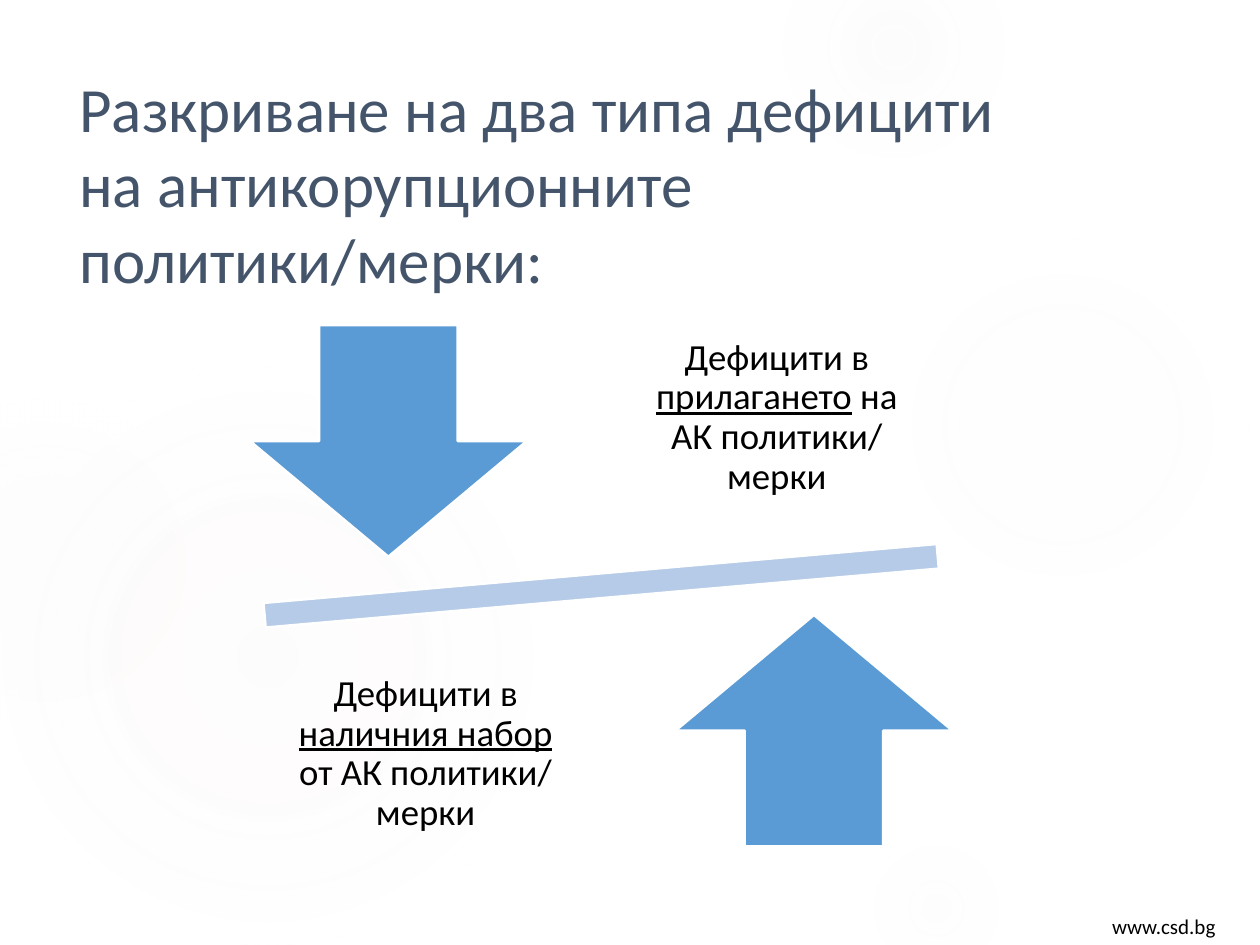
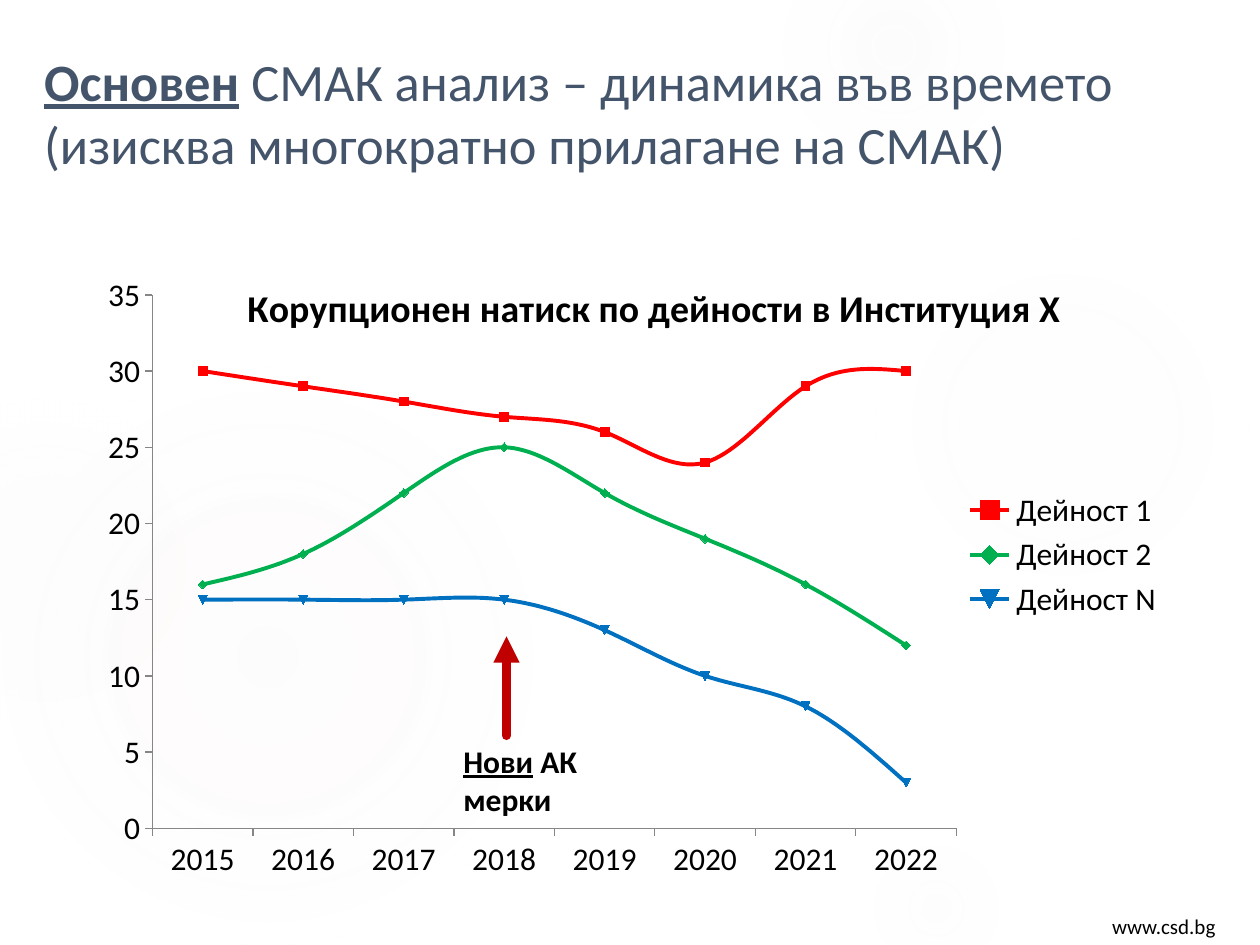
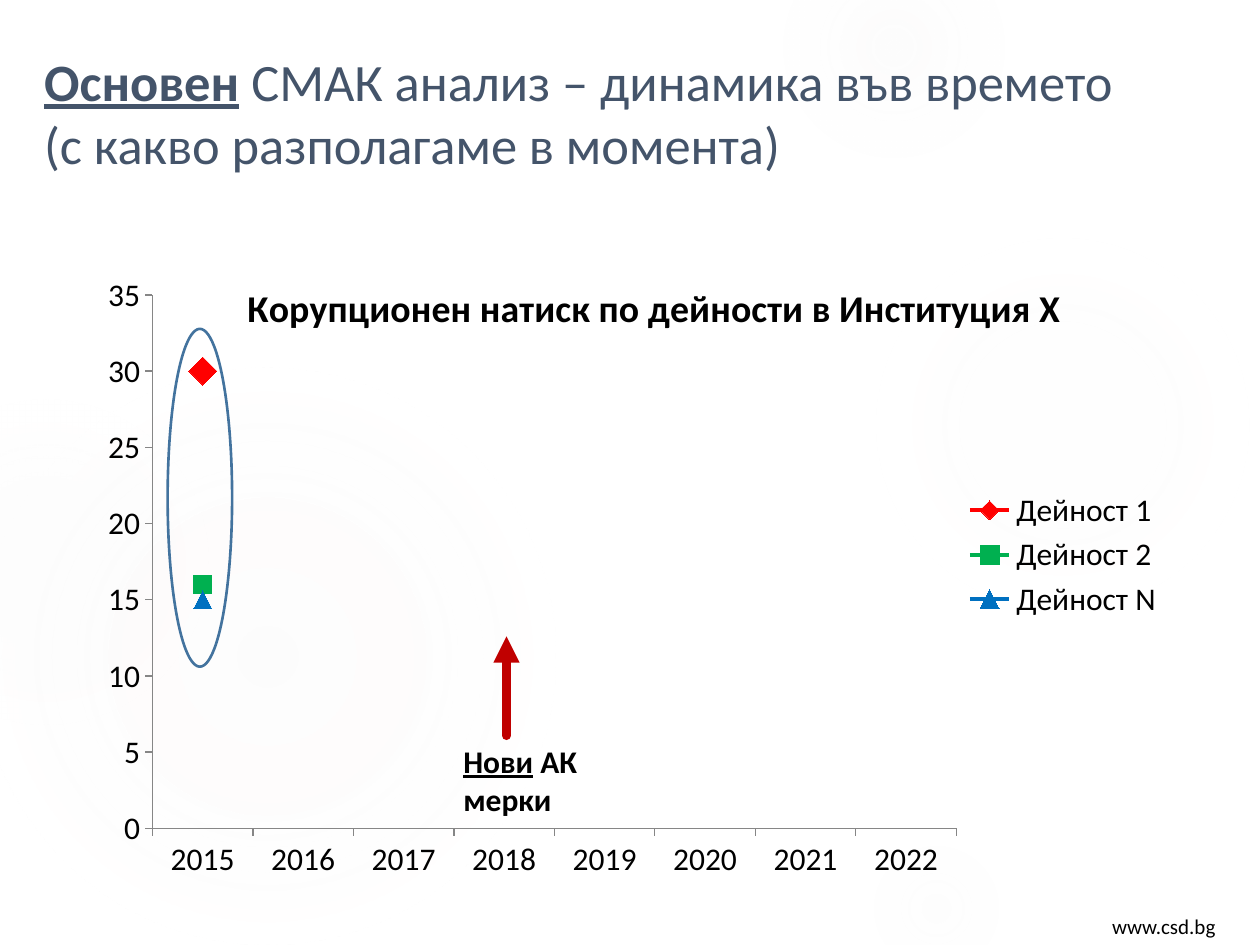
"""Builds three slides on deficits in anti-corruption measures."""
from lxml.etree import SubElement
from pptx import Presentation
from pptx.chart.data import CategoryChartData
from pptx.dml.color import RGBColor
from pptx.enum.chart import (XL_CHART_TYPE, XL_LEGEND_POSITION,
                             XL_MARKER_STYLE, XL_TICK_MARK)
from pptx.enum.shapes import MSO_CONNECTOR, MSO_SHAPE
from pptx.enum.text import MSO_ANCHOR, PP_ALIGN
from pptx.oxml import parse_xml
from pptx.oxml.ns import nsdecls, qn
from pptx.util import Cm, Pt

HUES = {"ink": "000000", "title": "44546A", "halo": "F1F0F0", "white": "FFFFFF",
        "arrow": "5B9BD5", "bar": "B5CBE7", "red": "FF0000", "green": "00B050",
        "blue": "0070C0", "axis": "868686", "mark": "C00000", "ring": "43739E"}
FACE = "Calibri"

HALOS = [
    (17.5, 4.65, 7.82, [(0, 7), (36, 6), (69, 0)]),
    (15.8, -1.27, 4.45, [(0, 14), (36, 7), (73, 0)]),
    (17.5, 16.94, 2.74, [(0, 9), (36, 5), (66, 0)]),
    (-0.43, 7.42, 11.63, [(0, 11), (36, 10), (75, 0)]),
    (-2.34, 8.05, 6.55, [(0, 8), (36, 8), (72, 0)]),
]
FOOT = "www.csd.bg"

LEAD = "Разкриване на два типа дефицити на антикорупционните политики/мерки:"
SIDES = [
    (1, MSO_SHAPE.DOWN_ARROW,
     [("Дефицити в ", ""), ("прилагането", "u"), (" на АК политики/ мерки", "")]),
    (-1, MSO_SHAPE.UP_ARROW,
     [("Дефицити в ", ""), ("наличния набор ", "u"), ("от АК политики/ мерки", "")]),
]
MID = (12.12, 11.81)

YEARS = [str(year) for year in range(2015, 2023)]
HEAD = "Корупционен натиск по дейности в Институция Х"
NEW = [("Нови", "bu"), (" АК мерки", "b")]
ACTS = [
    ("Дейност 1", "red", [30, 29, 28, 27, 26, 24, 29, 30]),
    ("Дейност 2", "green", [16, 18, 22, 25, 22, 19, 16, 12]),
    ("Дейност N", "blue", [15, 15, 15, 15, 13, 10, 8, 3]),
]
AUTO = XL_MARKER_STYLE.AUTOMATIC
TRENDS = [
    ("изисква многократно прилагане на СМАК", 8, [(AUTO, 5)] * 3),
    ("с какво разполагаме в момента", 1,
     [(XL_MARKER_STYLE.DIAMOND, 16), (XL_MARKER_STYLE.SQUARE, 10),
      (XL_MARKER_STYLE.TRIANGLE, 10)]),
]
PLOT = {"layoutTarget": "inner", "xMode": "edge", "yMode": "edge",
        "x": 0.07, "y": 0.12, "w": 0.73, "h": 0.78}
SPOT = {"xMode": "edge", "yMode": "edge", "x": 0.15, "y": 0.09}


def rgb(hue):
    return RGBColor.from_string(HUES[hue])


def apply(item, form):
    for key, value in form.items():
        setattr(item, key, value)


def ink(font, size, hue="ink", **form):
    apply(font, {"name": FACE, "size": Pt(size), **form})
    font.color.rgb = rgb(hue)


def paint(part, hue):
    part.fill.solid()
    part.fill.fore_color.rgb = rgb(hue)


def edge(line, hue, width):
    line.color.rgb = rgb(hue)
    line.width = Pt(width)


def draw(slide, kind, box):
    shape = slide.shapes.add_shape(kind, *map(Cm, box))
    shape.shadow.inherit = False
    return shape


def write(slide, box, runs, size, hue="ink", frame=None, para=None):
    text = slide.shapes.add_textbox(*map(Cm, box)).text_frame
    apply(text, {"word_wrap": True, **(frame or {})})
    line = text.paragraphs[0]
    apply(line, para or {})
    for words, marks in runs:
        run = line.add_run()
        run.text = words
        ink(run.font, size, hue, bold="b" in marks, underline="u" in marks)


def halo(slide, left, top, size, stops):
    shape = draw(slide, MSO_SHAPE.OVAL, (left, top, size, size))
    shape.line.fill.background()
    shape.fill.background()
    marks = "".join(
        f'<a:gs pos="{pos * 1000}"><a:srgbClr val="{HUES["halo"]}">'
        f'<a:alpha val="{alpha * 1000}"/></a:srgbClr></a:gs>'
        for pos, alpha in stops)
    grad = parse_xml(
        f'<a:gradFill {nsdecls("a")}><a:gsLst>{marks}</a:gsLst><a:path path="circle">'
        '<a:fillToRect l="50000" t="50000" r="50000" b="50000"/></a:path></a:gradFill>')
    props = shape._element.spPr
    props.replace(props.find(qn("a:noFill")), grad)


def start(deck):
    slide = deck.slides.add_slide(deck.slide_layouts[6])
    for item in HALOS:
        halo(slide, *item)
    write(slide, (22.17, 18.29, 3.23, 0.76), [(FOOT, "")], 12)
    return slide


def around(shift, size, sign):
    return [mid + sign * gap - span / 2
            for mid, gap, span in zip(MID, shift, size)] + list(size)


def block(slide, kind, box, hue):
    shape = draw(slide, kind, box)
    paint(shape, hue)
    edge(shape.line, "white", 1.5)
    return shape


def scale(deck):
    slide = start(deck)
    write(slide, (1.35, 1.27, 19.61, 4.72), [(LEAD, "")], 36, "title")
    bar = block(slide, MSO_SHAPE.MATH_MINUS, around((0, 0), (18.54, 2.13), 1), "bar")
    bar.rotation = 355
    frame = {f"margin_{side}": Cm(0.41) for side in ("left", "top", "right", "bottom")}
    frame["vertical_anchor"] = MSO_ANCHOR.MIDDLE
    para = {"alignment": PP_ALIGN.CENTER, "line_spacing": 0.9}
    for sign, kind, runs in SIDES:
        block(slide, kind, around((-4.29, -2.92), (5.59, 4.67), sign), "arrow")
        write(slide, around((3.54, -3.39), (5.97, 4.9), sign), runs, 21,
              frame=frame, para=para)


def place(part, rules):
    old = part.find(qn("c:layout"))
    if old is not None:
        part.remove(old)
    items = "".join(f'<c:{key} val="{value}"/>' for key, value in rules.items())
    node = parse_xml(f'<c:layout {nsdecls("c")}><c:manualLayout>{items}'
                     '</c:manualLayout></c:layout>')
    text = part.find(qn("c:tx"))
    if text is None:
        part.insert(0, node)
    else:
        text.addnext(node)


def graph(slide, count, signs):
    data = CategoryChartData()
    data.categories = YEARS
    for name, _, values in ACTS:
        data.add_series(name, values[:count] + [None] * (len(YEARS) - count))
    box = map(Cm, (1.52, 4.29, 22.2, 13.79))
    chart = slide.shapes.add_chart(XL_CHART_TYPE.LINE_MARKERS, *box, data).chart
    ink(chart.font, 18)
    apply(chart, {"has_title": True, "has_legend": True})
    apply(chart.legend, {"position": XL_LEGEND_POSITION.RIGHT,
                         "include_in_layout": False})
    title = chart.chart_title
    title.text_frame.text = HEAD
    ink(title.text_frame.paragraphs[0].runs[0].font, 21.6, bold=True)
    title.include_in_layout = False
    place(title._element, SPOT)
    place(chart._chartSpace.chart.plotArea, PLOT)
    for axis in (chart.category_axis, chart.value_axis):
        apply(axis, {"has_major_gridlines": False,
                     "major_tick_mark": XL_TICK_MARK.OUTSIDE,
                     "minor_tick_mark": XL_TICK_MARK.NONE})
        edge(axis.format.line, "axis", 0.75)
    apply(chart.value_axis, {"minimum_scale": 0, "maximum_scale": 35, "major_unit": 5})
    plot = chart.plots[0]
    plot.vary_by_categories = False
    for line, (_, hue, _), (style, size) in zip(plot.series, ACTS, signs):
        line.smooth = True
        edge(line.format.line, hue, 2.25)
        apply(line.marker, {"style": style, "size": size})
        paint(line.marker.format, hue)
        edge(line.marker.format.line, hue, 0.75)


def point(slide):
    ends = map(Cm, (10.21, 14.83, 10.21, 12.83))
    arrow = slide.shapes.add_connector(MSO_CONNECTOR.STRAIGHT, *ends)
    edge(arrow.line, "mark", 5)
    props = arrow._element.spPr
    line = props.find(qn("a:ln"))
    line.set("cap", "rnd")
    SubElement(line, qn("a:tailEnd"), type="triangle")
    SubElement(props, qn("a:effectLst"))
    write(slide, (9.09, 14.83, 2.82, 1.8), NEW, 18)


def trend(deck, note, count, signs):
    slide = start(deck)
    runs = [("Основен", "bu"), (f" СМАК анализ – динамика във времето ({note})", "")]
    write(slide, (0.64, 0.86, 22.1, 4.22), runs, 30, "title")
    graph(slide, count, signs)
    point(slide)
    if count == 1:
        ring = draw(slide, MSO_SHAPE.OVAL, (3.38, 6.63, 1.3, 6.81))
        ring.fill.background()
        edge(ring.line, "ring", 1.5)


def main():
    deck = Presentation()
    apply(deck, {"slide_width": Cm(25.4), "slide_height": Cm(19.05)})
    scale(deck)
    for item in TRENDS:
        trend(deck, *item)
    deck.save("out.pptx")


if __name__ == "__main__":
    main()
